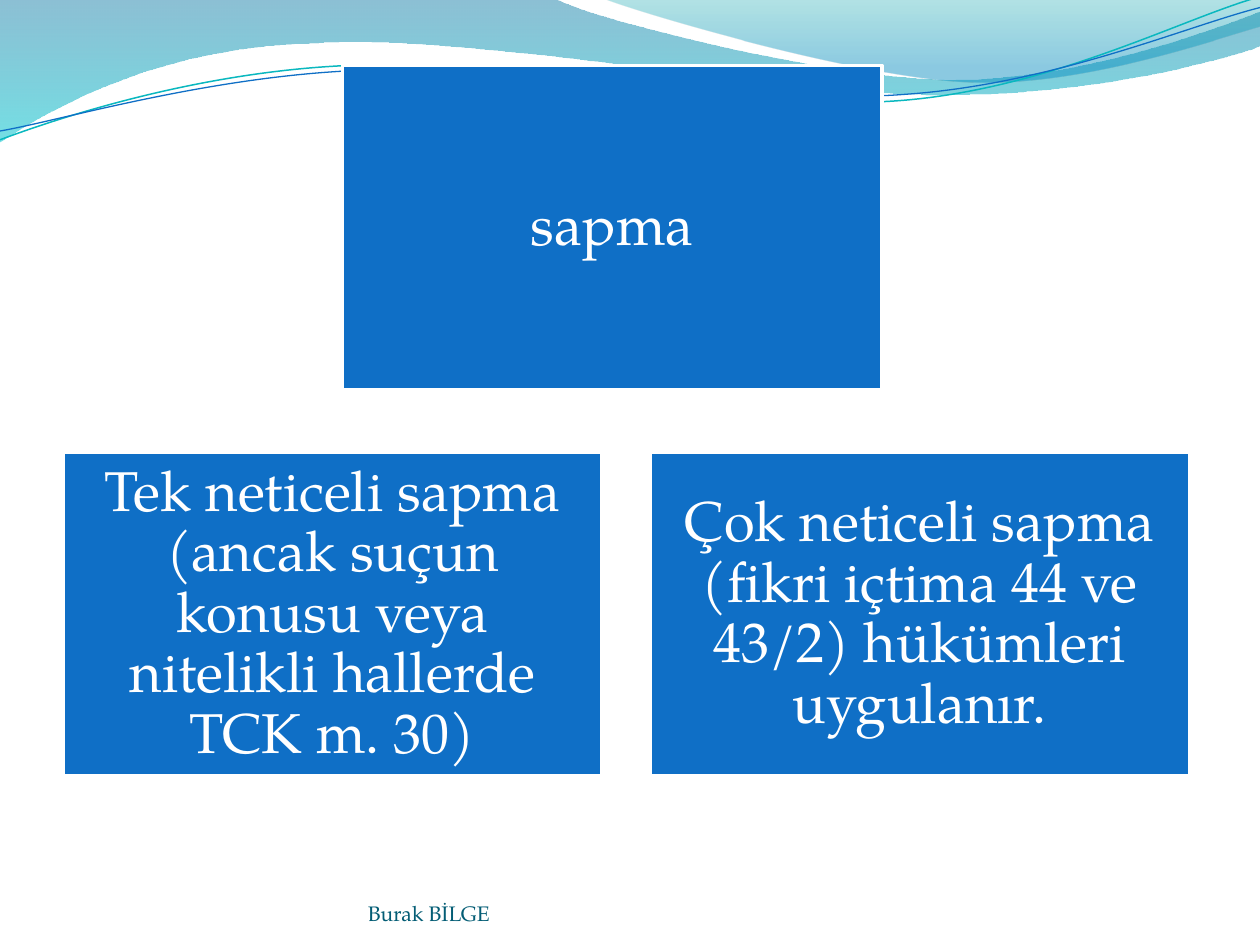
from lxml.etree import SubElement
from pptx import Presentation
from pptx.dml.color import RGBColor
from pptx.enum.shapes import MSO_SHAPE
from pptx.enum.text import MSO_ANCHOR, PP_ALIGN
from pptx.oxml.ns import qn
from pptx.util import Inches, Pt

FONT = "TeX Gyre Pagella"
COLORS = {
    "blue": "0F6FC6",
    "teal": "0AB8BF",
    "white": "FFFFFF",
    "footer": "045D75",
    "deep": "0074A1",
    "aqua": "00C6CF",
    "green": "00A1A9",
    "sky": "008BBF",
}
CURVE_STEPS = 30

BACK_WAVE = [
    (0, 0), (4.4, -0.01),
    (4.76, 0.17, 6.64, 0.63, 7.58, 0.63),
    (8.53, 0.63, 9.58, 0.26, 10, 0.09),
    (10.01, 0.36),
    (9.83, 0.44, 8.7, 0.76, 7.46, 0.75),
    (6.22, 0.75, 3.82, 0.28, 2.57, 0.34),
    (1.29, 0.36, 0.46, 0.83, -0.01, 1.13),
    (0, 0),
]
FRONT_WAVE = [
    (4.79, -0.01),
    (5.09, 0.11, 6.82, 0.62, 7.69, 0.65),
    (8.56, 0.69, 9.61, 0.32, 10, 0.21),
    (10, 0), (4.79, -0.01),
]
TEAL_LINE = [
    (0, 1.11),
    (0.48, 0.93, 1.58, 0.57, 2.77, 0.52),
    (3.95, 0.47, 5.93, 0.89, 7.13, 0.8),
    (8.33, 0.71, 9.38, 0.15, 9.98, -0.02),
]
BLUE_LINE = [
    (0, 1.04),
    (0.47, 0.96, 1.64, 0.61, 2.83, 0.56),
    (4.03, 0.51, 5.97, 0.84, 7.17, 0.75),
    (8.36, 0.67, 9.41, 0.21, 10, 0.06),
]


def rgb(name):
    return RGBColor.from_string(COLORS[name])


def bezier(p0, p1, p2, p3, t):
    u = 1 - t
    return tuple(
        u**3 * a + 3 * u * u * t * b + 3 * u * t * t * c + t**3 * d
        for a, b, c, d in zip(p0, p1, p2, p3)
    )


def bounds(outline):
    points = [outline[0]]
    for seg in outline[1:]:
        start = points[-1]
        if len(seg) == 2:
            points.append(seg)
        else:
            points += [
                bezier(start, seg[:2], seg[2:4], seg[4:], i / CURVE_STEPS)
                for i in range(1, CURVE_STEPS + 1)
            ]
    xs, ys = zip(*points)
    return min(xs), min(ys), max(xs), max(ys)


def add_outline(s, left, top, outline, close):
    x0, y0, x1, y1 = bounds(outline)
    builder = s.shapes.build_freeform(Inches(left + x0), Inches(top + y0))
    builder.add_line_segments([(Inches(left + x1), Inches(top + y1))], close=False)
    sp = builder.convert_to_shape()
    sp.shadow.inherit = False
    geometry = next(sp._element.spPr.iter(qn("a:path")))
    for child in list(geometry):
        geometry.remove(child)
    for i, seg in enumerate(outline):
        tag = "a:moveTo" if i == 0 else "a:lnTo" if len(seg) == 2 else "a:cubicBezTo"
        step = SubElement(geometry, qn(tag))
        for x, y in zip(seg[::2], seg[1::2]):
            pt = SubElement(step, qn("a:pt"))
            pt.set("x", str(int(Inches(x - x0))))
            pt.set("y", str(int(Inches(y - y0))))
    if close:
        SubElement(geometry, qn("a:close"))
    return sp


def add_wave(s, left, top, outline, stops):
    sp = add_outline(s, left, top, outline, True)
    sp.line.fill.background()
    sp.fill.gradient()
    sp.fill.gradient_angle = 270
    for stop, (position, color, _) in zip(sp.fill.gradient_stops, stops):
        stop.position = position
        stop.color.rgb = rgb(color)
    for clr, (_, _, opacity) in zip(sp._element.spPr.iter(qn("a:srgbClr")), stops):
        SubElement(clr, qn("a:alpha")).set("val", str(opacity * 1000))


def add_curve(s, left, top, outline, color, width):
    sp = add_outline(s, left, top, outline, False)
    sp.fill.background()
    sp.line.color.rgb = rgb(color)
    sp.line.width = Pt(width)


def add_header(s, left, top):
    add_wave(s, left, top, BACK_WAVE, [(0, "deep", 45), (1, "aqua", 55)])
    add_wave(s, left, top, FRONT_WAVE, [(0, "green", 30), (0.8, "sky", 45)])
    add_curve(s, left, top, TEAL_LINE, "teal", 0.85)
    add_curve(s, left, top, BLUE_LINE, "blue", 0.75)


def set_text(tf, text, size, color, anchor, margin):
    tf.word_wrap = True
    tf.vertical_anchor = anchor
    tf.margin_left = tf.margin_right = Inches(margin)
    tf.margin_top = tf.margin_bottom = Inches(margin)
    p = tf.paragraphs[0]
    p.text = text
    p.font.name = FONT
    p.font.size = Pt(size)
    p.font.color.rgb = rgb(color)
    return p


def add_card(s, left, top, width, height, text):
    sp = s.shapes.add_shape(
        MSO_SHAPE.RECTANGLE, Inches(left), Inches(top), Inches(width), Inches(height)
    )
    sp.shadow.inherit = False
    sp.fill.solid()
    sp.fill.fore_color.rgb = rgb("blue")
    sp.line.color.rgb = rgb("white")
    sp.line.width = Pt(2)
    p = set_text(sp.text_frame, text, 32, "white", MSO_ANCHOR.MIDDLE, 0.13)
    p.alignment = PP_ALIGN.CENTER
    p.line_spacing = 0.9


def add_cards(s, left, top):
    width, height = 4.28, 2.57
    column, row = 4.66, 3.07
    add_card(s, left, top + row, width, height,
             "Tek neticeli sapma (ancak suçun konusu veya nitelikli hallerde TCK m. 30)")
    add_card(s, left + 2.22, top, width, height, "sapma")
    add_card(s, left + column, top + row, width, height,
             "Çok neticeli sapma (fikri içtima 44 ve 43/2) hükümleri uygulanır.")


def add_footer(s, left, top, width, height):
    box = s.shapes.add_textbox(Inches(left), Inches(top), Inches(width), Inches(height))
    set_text(box.text_frame, "Burak BİLGE", 12, "footer", MSO_ANCHOR.BOTTOM, 0)


def main():
    prs = Presentation()
    prs.slide_width, prs.slide_height = Inches(10), Inches(7.5)
    s = prs.slides.add_slide(prs.slide_layouts[6])
    add_header(s, 0, 0)
    add_cards(s, 0.5, 0.52)
    add_footer(s, 2.92, 6.95, 3.67, 0.4)
    prs.save("out.pptx")


if __name__ == "__main__":
    main()
